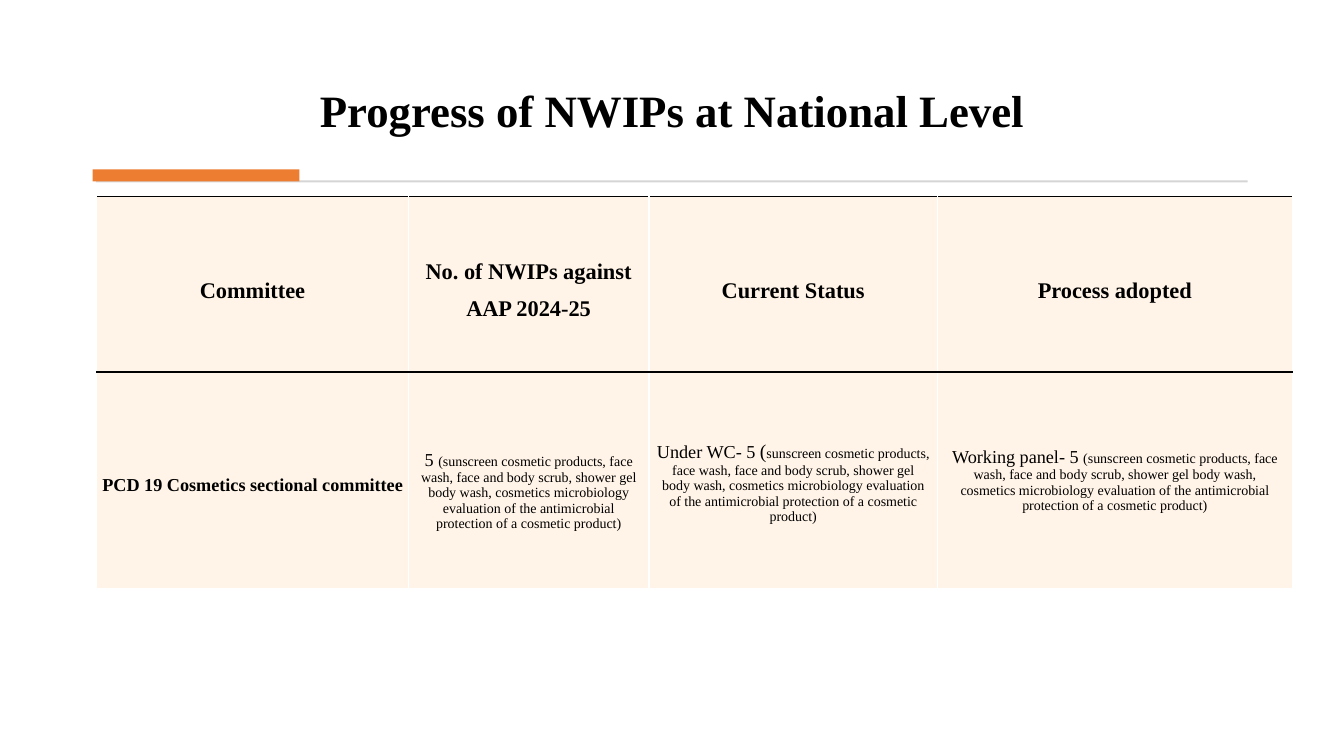
import pptx
import pptx.dml.color
import pptx.enum.shapes
import pptx.enum.text
import pptx.oxml
import pptx.oxml.ns
import pptx.util
from dataclasses import dataclass

Pt = pptx.util.Pt
RGB = pptx.dml.color.RGBColor.from_string
ALIGN = pptx.enum.text.PP_ALIGN
ANCHOR = pptx.enum.text.MSO_ANCHOR


@dataclass(frozen=True)
class Theme:
    font: str = "Times New Roman"
    text: str = "000000"
    accent: str = "ED7D31"
    rule: str = "D5D5D5"
    cell: str = "FFF4E7"
    edge: str = "FFFFFF"
    title: int = 32
    header: int = 16
    lead: int = 13
    paren: int = 14
    detail: int = 10


THEME = Theme()
PRODUCTS = ("sunscreen cosmetic products, face wash, face and body scrub, "
            "shower gel body wash, cosmetics microbiology evaluation of the "
            "antimicrobial protection of a cosmetic product)")
HEADERS = ["Committee", "No. of NWIPs against AAP 2024-25",
           "Current Status", "Process adopted"]
COMMITTEE = "PCD 19 Cosmetics sectional committee"
# Each entry: runs as (text, size), then the top inset that lowers the text
PROGRESS = [
    ([("5 ", THEME.lead), ("(" + PRODUCTS, THEME.detail)], 15),
    ([("Under WC- 5 ", THEME.lead), ("(", THEME.paren),
      (PRODUCTS, THEME.detail)], 3.5),
    ([("Working panel- 5 ", THEME.lead), ("(" + PRODUCTS, THEME.detail)], 0),
]
COLUMNS = [222.5, 172, 206, 253.5]
ROWS = [125.3, 154.8]


def set_all(obj, values):
    for name, value in values.items():
        setattr(obj, name, value)


def write(tf, runs, bold, spacing):
    p = tf.paragraphs[0]
    set_all(p, {"alignment": ALIGN.CENTER, "line_spacing": spacing})
    for text, size in runs:
        r = p.add_run()
        r.text = text
        set_all(r.font, {"name": THEME.font, "size": Pt(size), "bold": bold})
        r.font.color.rgb = RGB(THEME.text)


def add_title(s, x, y, w, h):
    title = s.shapes.title
    set_all(title, {"left": Pt(x), "top": Pt(y), "width": Pt(w), "height": Pt(h)})
    tf = title.text_frame
    set_all(tf, {"vertical_anchor": ANCHOR.MIDDLE, "word_wrap": True,
                 "auto_size": pptx.enum.text.MSO_AUTO_SIZE.NONE})
    write(tf, [("Progress of NWIPs at National Level", THEME.title)], True, 0.9)


def add_divider(s, x, y, w, h):
    """Thin rule along the bottom of the box with an accent bar at its left."""
    for left, top, width, height, color in [
            (x + 2.2, y + h - 0.7, w - 2.2, 1.4, THEME.rule),
            (x, y, 147.6, h, THEME.accent)]:
        sp = s.shapes.add_shape(pptx.enum.shapes.MSO_SHAPE.RECTANGLE,
                                Pt(left), Pt(top), Pt(width), Pt(height))
        sp.shadow.inherit = False
        sp.fill.solid()
        sp.fill.fore_color.rgb = RGB(color)
        sp.line.fill.background()


def style_cell(cell, bottom, margins):
    tc_pr = cell._tc.get_or_add_tcPr()
    for side, color in [("L", THEME.edge), ("R", THEME.edge),
                        ("T", THEME.text), ("B", bottom)]:
        tc_pr.append(pptx.oxml.parse_xml(
            f'<a:ln{side} {pptx.oxml.ns.nsdecls("a")} w="{Pt(1)}"><a:solidFill>'
            f'<a:srgbClr val="{color}"/></a:solidFill></a:ln{side}>'))
    cell.fill.solid()
    cell.fill.fore_color.rgb = RGB(THEME.cell)
    cell.vertical_anchor = ANCHOR.MIDDLE
    for side, value in zip(["left", "top", "right", "bottom"], margins):
        setattr(cell, f"margin_{side}", Pt(value))


def add_progress_table(s, x, y, w, h):
    table = s.shapes.add_table(len(ROWS), len(COLUMNS),
                               Pt(x), Pt(y), Pt(w), Pt(h)).table
    set_all(table, {"first_row": False, "horz_banding": False})
    for column, width in zip(table.columns, COLUMNS):
        column.width = Pt(width)
    for row, height in zip(table.rows, ROWS):
        row.height = Pt(height)

    tight = (1.4, 0.7, 1.4, 0.7)
    for c, text in enumerate(HEADERS):
        cell = table.cell(0, c)
        style_cell(cell, THEME.text, tight)
        write(cell.text_frame, [(text, THEME.header)], True, 1.5)

    cell = table.cell(1, 0)
    style_cell(cell, THEME.edge, tight)
    write(cell.text_frame, [(COMMITTEE, THEME.lead)], True, 1.5)
    for c, (runs, top) in enumerate(PROGRESS, 1):
        cell = table.cell(1, c)
        style_cell(cell, THEME.edge, (5.4, top, 5.4, 0))
        write(cell.text_frame, runs, False, 1.0)


def main():
    prs = pptx.Presentation()
    set_all(prs, {"slide_width": Pt(960), "slide_height": Pt(540)})
    s = prs.slides.add_slide(prs.slide_layouts.get_by_name("Title Only"))
    add_divider(s, 66.2, 121, 825, 8.6)
    add_progress_table(s, 69.1, 140.4, sum(COLUMNS), sum(ROWS))
    add_title(s, 66.2, 28.8, 828, 104.4)
    prs.save("out.pptx")


if __name__ == "__main__":
    main()
